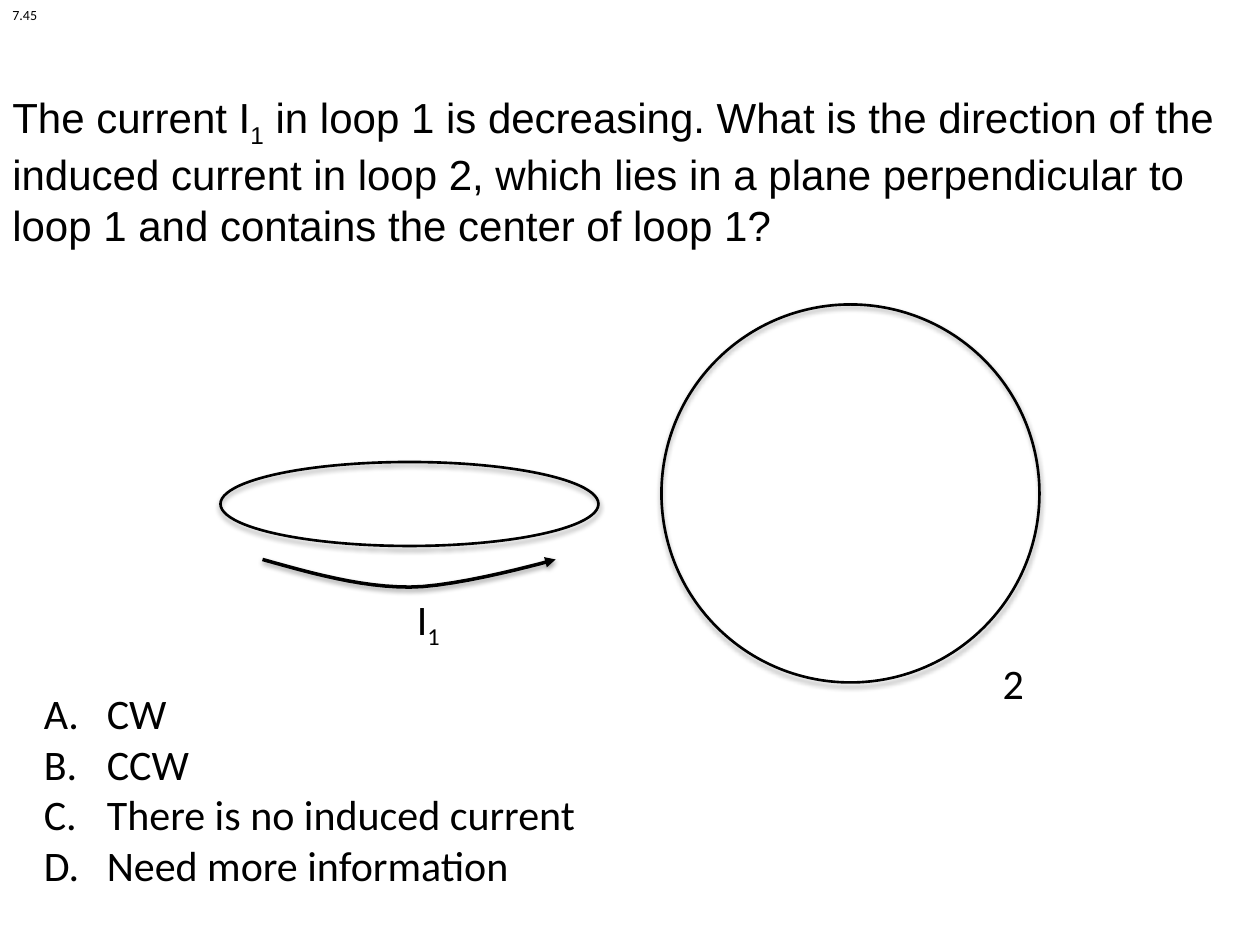
from lxml.etree import SubElement
from pptx import Presentation
from pptx.dml.color import RGBColor
from pptx.enum.shapes import MSO_SHAPE
from pptx.enum.text import MSO_ANCHOR, MSO_AUTO_SIZE
from pptx.oxml.ns import qn
from pptx.util import Pt

COLORS = {"ink": "000000", "paper": "FFFFFF"}


class LoopSlide:
    """Hold the text and line style and draw elements on one slide."""

    def __init__(self, presentation):
        self.slide = presentation.slides.add_slide(presentation.slide_layouts[6])
        self.ink = RGBColor.from_string(COLORS["ink"])
        fill = self.slide.background.fill
        fill.solid()
        fill.fore_color.rgb = RGBColor.from_string(COLORS["paper"])

    def text(self, box, paragraphs, size=24, font="Calibri", wrap=True,
             anchor=MSO_ANCHOR.TOP, lettered=False):
        """Add a text box; each run is a (text, is_subscript) pair."""
        shape = self.slide.shapes.add_textbox(*map(Pt, box))
        frame = shape.text_frame
        frame.word_wrap = wrap
        frame.vertical_anchor = anchor
        frame.auto_size = MSO_AUTO_SIZE.NONE
        for index, runs in enumerate(paragraphs):
            paragraph = frame.add_paragraph() if index else frame.paragraphs[0]
            if lettered:
                self.letter(paragraph)
            for content, subscript in runs:
                run = paragraph.add_run()
                run.text = content
                run.font.size = Pt(size)
                run.font.name = font
                run.font.color.rgb = self.ink
                if subscript:
                    run.font._element.set("baseline", "-25000")

    def letter(self, paragraph):
        """Number a paragraph with a capital letter and a hanging indent."""
        properties = paragraph._p.get_or_add_pPr()
        properties.set("marL", str(Pt(36)))
        properties.set("indent", str(-Pt(36)))
        SubElement(properties, qn("a:buFont"), typeface="+mj-lt")
        SubElement(properties, qn("a:buAutoNum"), type="alphaUcPeriod")

    def outline(self, shape, width, distance, opacity):
        """Give a shape an unfilled ink outline with a soft shadow below."""
        shape.fill.background()
        shape.line.color.rgb = self.ink
        shape.line.width = Pt(width)
        shape.shadow.inherit = False
        effects = shape._element.spPr.find(qn("a:effectLst"))
        shadow = SubElement(effects, qn("a:outerShdw"), blurRad=str(Pt(3.1)),
                            dist=str(Pt(distance)), dir="5400000", rotWithShape="0")
        color = SubElement(shadow, qn("a:srgbClr"), val=COLORS["ink"])
        SubElement(color, qn("a:alpha"), val=str(opacity * 1000))

    def loop(self, box):
        """Add an elliptical wire loop."""
        shape = self.slide.shapes.add_shape(MSO_SHAPE.OVAL, *map(Pt, box))
        self.outline(shape, 1.5, 1.8, 35)

    def curved_arrow(self, start, curves, steps=12):
        """Add an arrow along cubic curves, each given by three points."""
        points, origin = [], start
        for first, second, end in curves:
            for step in range(1, steps + 1):
                t = step / steps
                weights = ((1 - t) ** 3, 3 * t * (1 - t) ** 2, 3 * t * t * (1 - t), t ** 3)
                corners = (origin, first, second, end)
                points.append(tuple(
                    Pt(sum(weight * corner[axis] for weight, corner in zip(weights, corners)))
                    for axis in (0, 1)))
            origin = end
        builder = self.slide.shapes.build_freeform(*map(Pt, start))
        builder.add_line_segments(points, close=False)
        shape = builder.convert_to_shape()
        self.outline(shape, 2, 1.6, 38)
        SubElement(shape.line._get_or_add_ln(), qn("a:tailEnd"), type="triangle")


def main():
    presentation = Presentation()
    presentation.slide_width, presentation.slide_height = Pt(720), Pt(540)
    slide = LoopSlide(presentation)
    question = [
        ("The current I", False), ("1", True),
        (" in loop 1 is decreasing. What is the direction of the induced current "
         "in loop 2, which lies in a plane perpendicular to loop 1 and contains "
         "the center of loop 1?", False),
    ]
    answers = ["CW", "CCW", "There is no induced current", "Need more information"]

    slide.text((0, 44.64, 720, 105.84), [question], font="Arial", anchor=MSO_ANCHOR.MIDDLE)
    slide.text((18, 389.5, 494.6, 123.8), [[(answer, False)] for answer in answers],
               lettered=True)
    slide.loop((126, 264, 216, 48))
    slide.curved_arrow((150, 319.7), [
        ((178, 327.6), (206, 335.5), (234, 335.5)),
        ((262, 335.5), (317.5, 319.7), (317.5, 319.7)),
    ])
    slide.text((231.1, 335.5, 30.2, 36.7), [[("I", False), ("1", True)]], wrap=False)
    slide.loop((378, 174, 216, 216))
    slide.text((565.9, 372.2, 28.1, 36.7), [[("2", False)]], wrap=False)
    slide.text((0, 0, 28.8, 17.3), [[("7.45", False)]], size=8, wrap=False)
    presentation.save("out.pptx")


if __name__ == "__main__":
    main()
